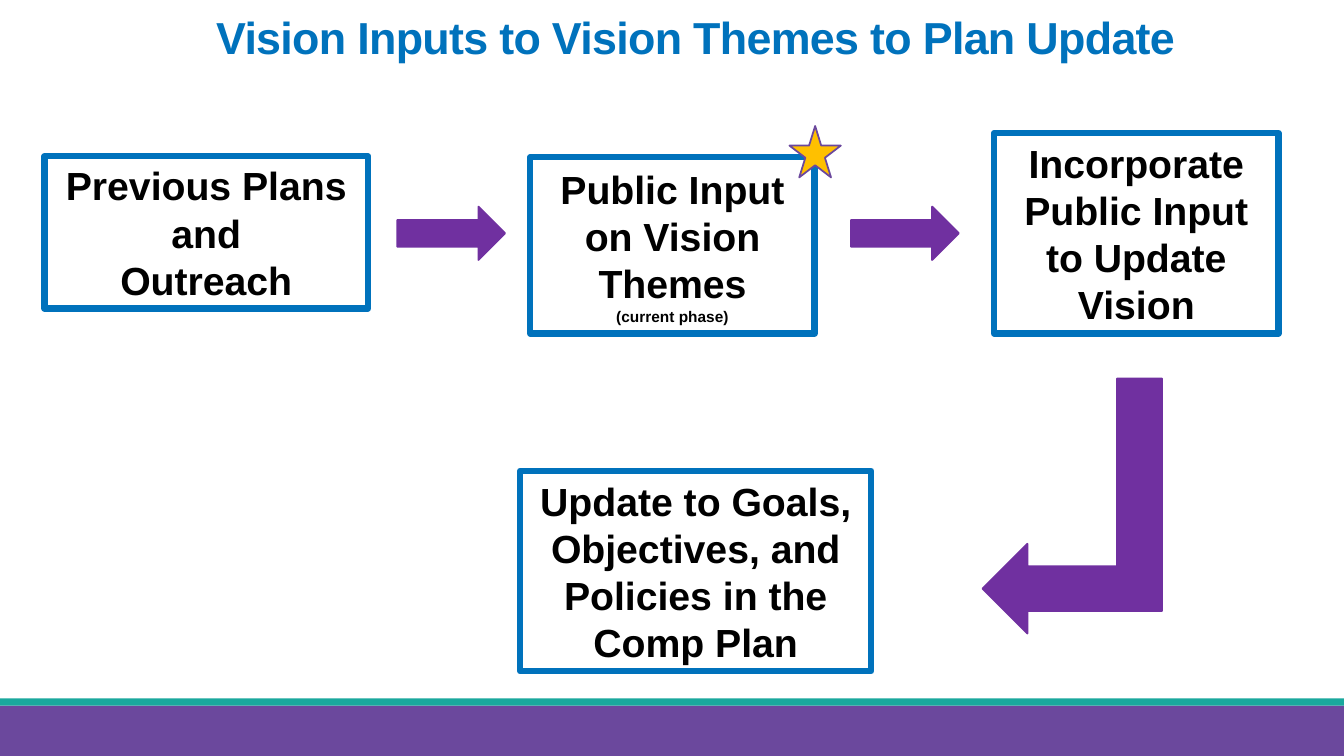
from dataclasses import dataclass

from pptx import Presentation
from pptx.dml.color import RGBColor
from pptx.enum.shapes import MSO_SHAPE
from pptx.enum.text import MSO_ANCHOR, MSO_AUTO_SIZE, PP_ALIGN
from pptx.oxml.ns import qn
from pptx.util import Inches, Pt

RECTANGLE = MSO_SHAPE.RECTANGLE
RIGHT_ARROW = MSO_SHAPE.RIGHT_ARROW
BENT_ARROW = MSO_SHAPE.BENT_UP_ARROW
STAR = MSO_SHAPE.STAR_5_POINT
CENTER = PP_ALIGN.CENTER
TOP = MSO_ANCHOR.TOP
MIDDLE = MSO_ANCHOR.MIDDLE
NO_AUTOFIT = MSO_AUTO_SIZE.NONE
GROW_TO_TEXT = MSO_AUTO_SIZE.SHAPE_TO_FIT_TEXT
TITLE_ONLY = 5


@dataclass(frozen=True)
class Theme:
    font: str = "Arial"
    blue: RGBColor = RGBColor(0x00, 0x72, 0xBC)
    teal: RGBColor = RGBColor(0x1A, 0xA8, 0x9D)
    violet: RGBColor = RGBColor(0x6B, 0x48, 0x9D)
    arrow: RGBColor = RGBColor(0x70, 0x30, 0xA0)
    gold: RGBColor = RGBColor(0xFF, 0xC0, 0x00)
    black: RGBColor = RGBColor(0x00, 0x00, 0x00)
    title_size: int = 32
    step_size: int = 28
    note_size: int = 11
    frame_width: float = 4.5
    outline_width: float = 1.25


THEME = Theme()


def add_shape(slide, kind, box, fill=None, line=None, width=THEME.outline_width):
    shape = slide.shapes.add_shape(kind, *(Inches(length) for length in box))
    shape.shadow.inherit = False
    if fill is None:
        shape.fill.background()
    else:
        shape.fill.solid()
        shape.fill.fore_color.rgb = fill
    if line is None:
        shape.line.fill.background()
    else:
        shape.line.color.rgb = line
        shape.line.width = Pt(width)
    return shape


def format_run(run, size, color):
    run.font.name = THEME.font
    run.font.size = Pt(size)
    run.font.bold = True
    run.font.color.rgb = color


def add_footer(slide, box):
    """Violet band with a thin teal stripe along its top."""
    left, top, width, height = box
    stripe = 0.07
    add_shape(slide, RECTANGLE, (left, top + stripe, width, height - stripe), THEME.violet)
    add_shape(slide, RECTANGLE, (left, top, width, stripe), THEME.teal)


def set_title(slide, box, text):
    title = slide.shapes.title
    title.left, title.top, title.width, title.height = (Inches(length) for length in box)
    frame = title.text_frame
    frame.text = text
    frame.word_wrap = True
    frame.auto_size = NO_AUTOFIT
    frame.vertical_anchor = TOP
    paragraph = frame.paragraphs[0]
    paragraph.alignment = CENTER
    paragraph.line_spacing = 0.85
    paragraph.space_before = Pt(0)
    for run in paragraph.runs:
        format_run(run, THEME.title_size, THEME.blue)
        run.font._element.set("spc", "-50")


def add_step(slide, box, text, has_note=False):
    """Framed step; with has_note its last line is set small."""
    step = add_shape(slide, RECTANGLE, box, line=THEME.blue, width=THEME.frame_width)
    frame = step.text_frame
    frame.word_wrap = True
    frame.auto_size = GROW_TO_TEXT
    frame.vertical_anchor = MIDDLE
    paragraph = frame.paragraphs[0]
    paragraph.text = text
    paragraph.alignment = CENTER
    for run in paragraph.runs:
        format_run(run, THEME.step_size, THEME.black)
    if has_note:
        paragraph.runs[-1].font.size = Pt(THEME.note_size)


def add_arrow(slide, kind, box):
    return add_shape(slide, kind, box, THEME.arrow, THEME.arrow)


def add_flow(slide, box):
    left, top, width, height = box

    # Steps, placed from the corner of the flow area
    steps = [
        ((0, 0.3, 3.21, 1.51), "Previous Plans and\vOutreach", False),
        ((4.82, 0.31, 2.82, 1.75), "Public Input on Vision Themes\v(current phase)", True),
        ((width - 2.82, 0.07, 2.82, 1.99), "Incorporate Public Input to Update Vision", False),
        ((4.72, height - 1.99, 3.48, 1.99),
         "Update to Goals, Objectives, and Policies in the Comp Plan", False),
    ]
    for (x, y, step_width, step_height), text, has_note in steps:
        add_step(slide, (left + x, top + y, step_width, step_height), text, has_note)

    # Arrows between the steps of the upper row
    for x in (3.5, 8):
        add_arrow(slide, RIGHT_ARROW, (left + x, top + 0.8, 1.07, 0.53))

    # Arrow turning down and back to the last step
    turn = add_arrow(slide, BENT_ARROW, (left + 8.93, top + 2.88, 2.53, 1.78))
    turn.rotation = 90
    turn._element.spPr.find(qn("a:xfrm")).set("flipV", "1")

    # Star on the current phase
    add_shape(slide, STAR, (left + 7.39, top, 0.51, 0.51), THEME.gold, THEME.violet)


def main():
    presentation = Presentation()
    presentation.slide_width = Inches(13.33)
    presentation.slide_height = Inches(7.5)
    slide = presentation.slides.add_slide(presentation.slide_layouts[TITLE_ONLY])
    add_footer(slide, (0, 6.93, 13.33, 0.57))
    set_title(slide, (0.95, 0.13, 11.9, 0.82), "Vision Inputs to Vision Themes to Plan Update")
    add_flow(slide, (0.44, 1.25, 12.24, 5.41))
    presentation.save("out.pptx")


if __name__ == "__main__":
    main()
